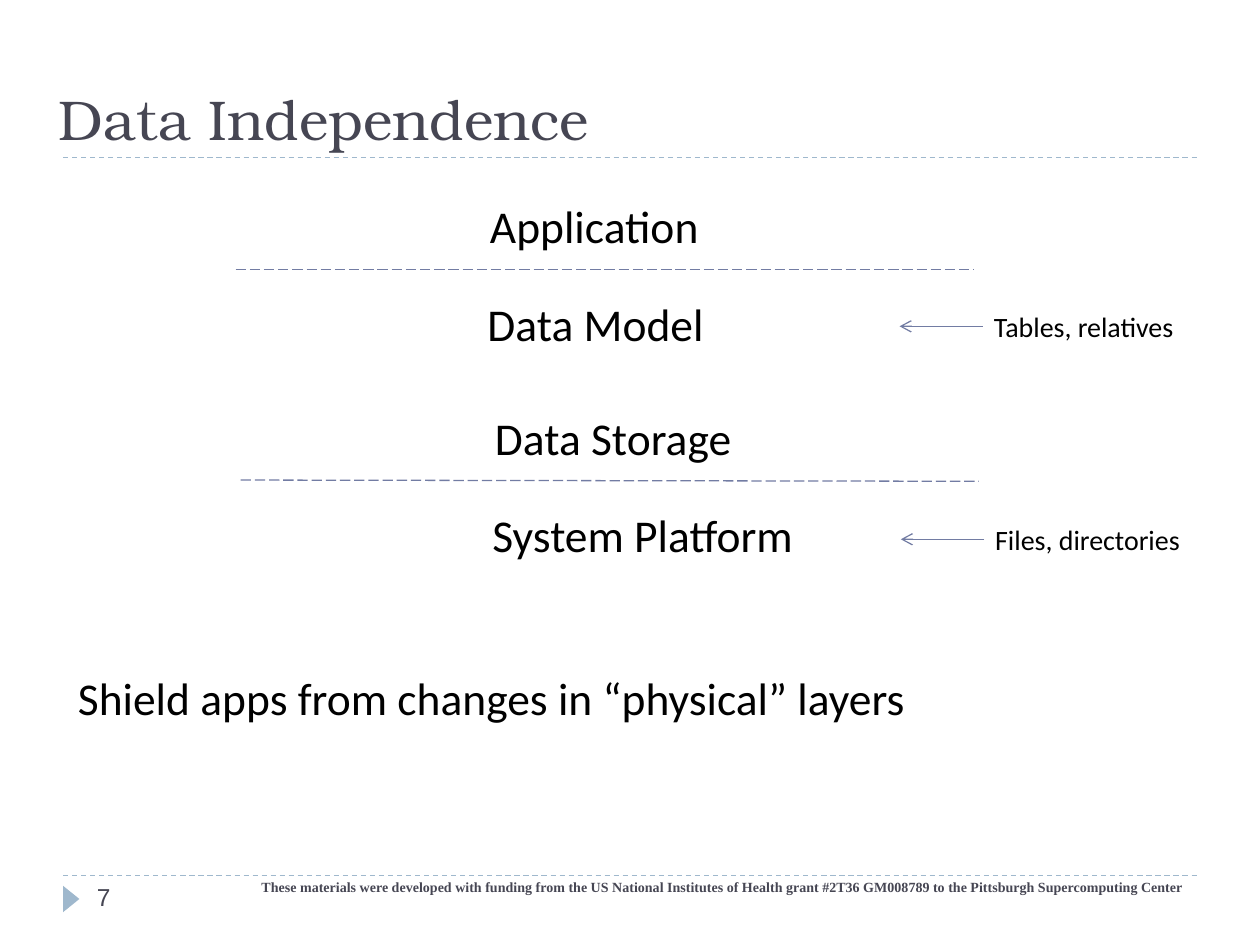
from dataclasses import dataclass

import pptx
import pptx.dml.color
import pptx.enum.dml
import pptx.enum.shapes
import pptx.enum.text
import pptx.oxml.ns
import pptx.slide
import pptx.util
from lxml import etree

Inches = pptx.util.Inches
Align = pptx.enum.text.PP_ALIGN
Anchor = pptx.enum.text.MSO_ANCHOR
Dash = pptx.enum.dml.MSO_LINE

INK, SLATE, PALE, ACCENT = "000000", "464653", "9FB8CD", "727CA3"


@dataclass
class Label:
    text: str
    left: float
    top: float
    width: float
    height: float = 0.51
    size: int = 26
    font: str = "Calibri"
    color: str = INK
    bold: bool = False
    align: Align = Align.LEFT
    anchor: Anchor = Anchor.TOP
    spacing: float = 0.93
    grow: bool = True


@dataclass
class Rule:
    start: tuple[float, float]
    end: tuple[float, float]
    color: str = ACCENT
    dash: Dash | None = None
    arrow: bool = False


def rgb(value: str) -> pptx.dml.color.RGBColor:
    return pptx.dml.color.RGBColor.from_string(value)


def draw_label(page: pptx.slide.Slide, label: Label) -> None:
    box = page.shapes.add_textbox(Inches(label.left), Inches(label.top),
                                  Inches(label.width), Inches(label.height))
    frame = box.text_frame
    frame.word_wrap = True
    frame.vertical_anchor = label.anchor
    if label.grow:
        frame.auto_size = pptx.enum.text.MSO_AUTO_SIZE.SHAPE_TO_FIT_TEXT
    para = frame.paragraphs[0]
    para.alignment = label.align
    para.line_spacing = label.spacing
    span = para.add_run()
    span.text = label.text
    span.font.name = label.font
    span.font.size = pptx.util.Pt(label.size)
    span.font.bold = label.bold
    span.font.color.rgb = rgb(label.color)


def draw_rule(page: pptx.slide.Slide, rule: Rule) -> None:
    connector = page.shapes.add_connector(
        pptx.enum.shapes.MSO_CONNECTOR.STRAIGHT,
        *(Inches(value) for value in rule.start + rule.end))
    connector.line.color.rgb = rgb(rule.color)
    connector.line.width = pptx.util.Pt(0.75)
    if rule.dash is not None:
        connector.line.dash_style = rule.dash
    qn = pptx.oxml.ns.qn
    properties = connector._element.spPr
    if rule.arrow:
        etree.SubElement(properties.find(qn("a:ln")), qn("a:tailEnd"), type="arrow")
    etree.SubElement(properties, qn("a:effectLst"))


def draw_marker(page: pptx.slide.Slide) -> None:
    marker = page.shapes.add_shape(
        pptx.enum.shapes.MSO_SHAPE.ISOSCELES_TRIANGLE,
        Inches(0.46), Inches(7.07), Inches(0.21), Inches(0.13))
    marker.rotation = 90
    marker.shadow.inherit = False
    marker.fill.solid()
    marker.fill.fore_color.rgb = rgb(PALE)
    marker.line.fill.background()


# Title and footer
FRAME_RULES = [Rule((0.5, y), (9.5, y), PALE, Dash.DASH) for y in (6.95, 1.25)]
FRAME_LABELS = [
    Label("Data Independence", 0.37, 0.17, 9.3, 1.08, 32, "TeX Gyre Bonum", SLATE,
          anchor=Anchor.BOTTOM, spacing=1.0, grow=False),
    Label("These materials were developed with funding from the US National "
          "Institutes of Health grant #2T36 GM008789 to the Pittsburgh "
          "Supercomputing Center", 1.57, 6.92, 7.93, 0.4, 8, "Times New Roman",
          SLATE, bold=True, align=Align.RIGHT, spacing=1.0, grow=False),
    Label("7", 0.67, 6.95, 2.17, 0.4, 14, "Arial", SLATE, spacing=1.0, grow=False),
]

# Layers, the boundaries between them, and the closing statement
LAYERS = [
    Label("Application", 3.79, 1.56, 2.01),
    Label("Data Model", 3.77, 2.34, 2.18),
    Label("Data Storage", 3.83, 3.24, 2.2),
    Label("System Platform", 3.81, 4.01, 2.64),
    Label("Shield apps from changes in “physical” layers", 0.52, 5.31, 9.02),
]
BOUNDARIES = [
    Rule((1.87, 2.14), (7.73, 2.14), dash=Dash.LONG_DASH),
    Rule((1.91, 3.81), (7.77, 3.82), dash=Dash.LONG_DASH),
]

# Side notes, each with an arrow pointing at its layer
NOTES = [
    Label("Tables, relatives", 7.79, 2.43, 2.01, 0.35, 16),
    Label("Files, directories", 7.8, 4.12, 2.01, 0.35, 16),
]
ARROWS = [
    Rule((note.left + 0.01, note.top + 0.16), (note.left - 0.65, note.top + 0.16),
         arrow=True)
    for note in NOTES
]


def main() -> None:
    deck = pptx.Presentation()
    deck.slide_width, deck.slide_height = Inches(10), Inches(7.5)
    page = deck.slides.add_slide(deck.slide_layouts[6])
    for rule in FRAME_RULES + BOUNDARIES + ARROWS:
        draw_rule(page, rule)
    draw_marker(page)
    for label in FRAME_LABELS + LAYERS + NOTES:
        draw_label(page, label)
    deck.save("out.pptx")


if __name__ == "__main__":
    main()
